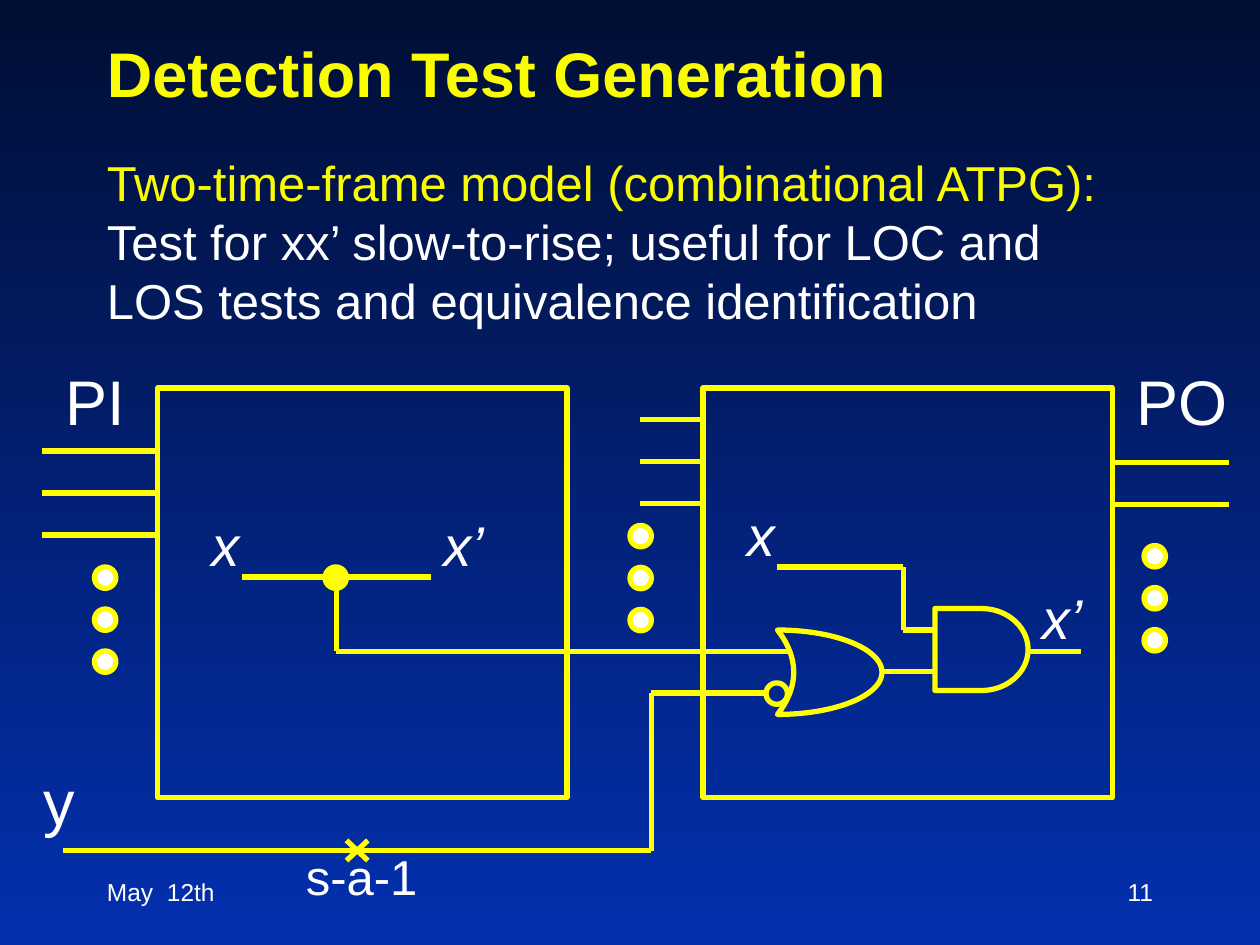
from pptx import Presentation
from pptx.dml.color import RGBColor
from pptx.enum.shapes import MSO_CONNECTOR, MSO_SHAPE
from pptx.enum.text import MSO_ANCHOR, PP_ALIGN
from pptx.oxml.ns import qn
from pptx.util import Inches, Pt
from lxml import etree

RECT = MSO_SHAPE.RECTANGLE
OVAL = MSO_SHAPE.OVAL
DOT = MSO_SHAPE.FLOWCHART_CONNECTOR
MOON = MSO_SHAPE.MOON
DELAY = MSO_SHAPE.FLOWCHART_DELAY
LINE = MSO_CONNECTOR.STRAIGHT
TOP, MID, LOW = MSO_ANCHOR.TOP, MSO_ANCHOR.MIDDLE, MSO_ANCHOR.BOTTOM
LEFT, RIGHT = PP_ALIGN.LEFT, PP_ALIGN.RIGHT
NAVY = RGBColor(0x01, 0x0E, 0x34)
BLUE = RGBColor(0x03, 0x30, 0xAF)
GOLD = RGBColor(0xFA, 0xFD, 0x00)
YELLOW = RGBColor(0xFF, 0xFF, 0x00)
WHITE = RGBColor(0xFF, 0xFF, 0xFF)
DIAM = 0.17

prs = Presentation()
prs.slide_width, prs.slide_height = Inches(10), Inches(7.5)
slide = prs.slides.add_slide(prs.slide_layouts[6])
shapes = slide.shapes

back = slide.background.fill
back.gradient()
back.gradient_angle = 270
for stop, color in zip(back.gradient_stops, (NAVY, BLUE)):
    stop.color.rgb = color


def add_text(box, parts, size, anchor=TOP, align=LEFT, wrap=True, **style):
    """Put (text, color) parts in one paragraph, a line break between them."""
    frame = shapes.add_textbox(*map(Inches, box)).text_frame
    frame.word_wrap, frame.vertical_anchor = wrap, anchor
    para = frame.paragraphs[0]
    para.alignment = align
    for num, (text, color) in enumerate(parts):
        if num:
            para.add_line_break()
        run = para.add_run()
        run.text = text
        run.font.color.rgb = color
        for name, value in {"name": "Arial", "size": Pt(size), **style}.items():
            setattr(run.font, name, value)


def add_shape(kind, box, fill=None):
    shape = shapes.add_shape(kind, *map(Inches, box))
    shape.shadow.inherit = False
    if fill is None:
        shape.fill.background()
    else:
        shape.fill.solid()
        shape.fill.fore_color.rgb = fill
    shape.line.color.rgb, shape.line.width = YELLOW, Pt(3)
    return shape


# Title, body and footer
add_text((0.75, 0.25, 8.92, 0.67), [("Detection Test Generation", GOLD)], 36, LOW, bold=True)
add_text((0.75, 1.08, 8.25, 1.58), [
    ("Two-time-frame model (combinational ATPG):", GOLD),
    ("Test for xx’ slow-to-rise; useful for LOC and LOS tests "
     "and equivalence identification", WHITE),
], 28, LOW)
add_text((0.75, 6.83, 2.08, 0.5), [("May  12th", WHITE)], 14, MID)
add_text((7.17, 6.83, 2.08, 0.5), [("11", WHITE)], 14, MID, RIGHT)

# Time frames and gates
for left in (1.25, 5.58):
    add_shape(RECT, (left, 3.08, 3.25, 3.25))
gate = add_shape(MOON, (6.17, 5, 0.83, 0.67))
gate.adjustments[0] = 0.844
gate.rotation = 180
add_shape(OVAL, (6.08, 5.42, DIAM, DIAM))
add_shape(DELAY, (7.42, 4.83, 0.74, 0.65))

# Wires, each a path of corner points
wires = [
    [(1.92, 4.58), (3.42, 4.58)],
    [(2.67, 4.58), (2.67, 5.17), (6.25, 5.17)],
    [(0.5, 6.75), (5.17, 6.75), (5.17, 5.5), (6.08, 5.5)],
    [(6.17, 4.5), (7.17, 4.5), (7.17, 5), (7.42, 5)],
    [(7, 5.33), (7.42, 5.33)],
    [(8.17, 5.17), (8.58, 5.17)],
    [(2.75, 6.67), (2.92, 6.83)],
    [(2.92, 6.67), (2.75, 6.83)],
]
# Input and output buses: left, right, first height, count
for left, right, top, count in [(0.33, 1.25, 3.58, 3), (5.08, 5.58, 3.33, 3), (8.83, 9.75, 3.67, 2)]:
    for num in range(count):
        y = top + num / 3
        wires.append([(left, y), (right, y)])
for wire in wires:
    for start, end in zip(wire, wire[1:]):
        line = shapes.add_connector(LINE, *map(Inches, start + end))
        line.line.color.rgb, line.line.width = YELLOW, Pt(3)
        etree.SubElement(line._element.spPr, qn("a:effectLst"))

# Branch point and the dots that continue each bus
add_shape(DOT, (2.58, 4.5, DIAM, DIAM), YELLOW)
for left, top in [(0.75, 4.5), (5, 4.17), (9.08, 4.33)]:
    for num in range(3):
        add_shape(DOT, (left, top + num / 3, DIAM, DIAM), WHITE)

# Signal names
for text, left, top, width in [("x", 1.58, 4, 0.83), ("x’", 3.42, 4, 0.75),
                               ("x", 5.83, 3.92, 0.83), ("x’", 8.17, 4.58, 0.75)]:
    add_text((left, top, width, 0.64), [(text, WHITE)], 32, italic=True)
for text, left, top, width in [("PI", 0.42, 2.83, 0.75), ("PO", 8.92, 2.83, 1.08),
                               ("y", 0.25, 6, 0.58)]:
    add_text((left, top, width, 0.71), [(text, WHITE)], 36)
add_text((2.33, 6.67, 1.1, 0.57), [("s-a-1", WHITE)], 28, wrap=False)

prs.save("out.pptx")
